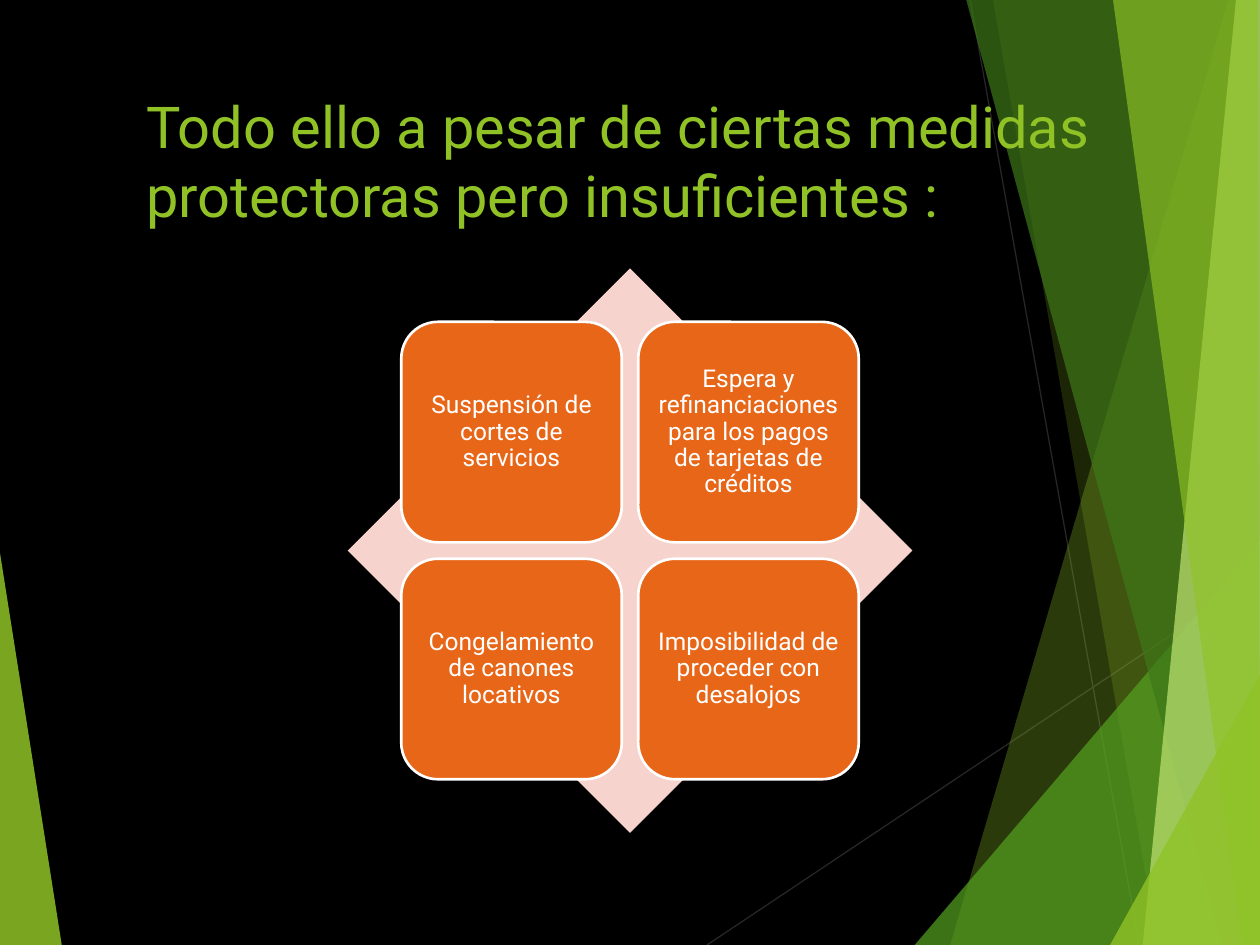
from lxml.etree import SubElement
from pptx import Presentation
from pptx.dml.color import RGBColor
from pptx.enum.shapes import MSO_CONNECTOR, MSO_SHAPE
from pptx.enum.text import MSO_ANCHOR, MSO_AUTO_SIZE, PP_ALIGN
from pptx.oxml.ns import qn
from pptx.util import Pt

BLACK = RGBColor(0x00, 0x00, 0x00)
WHITE = RGBColor(0xFF, 0xFF, 0xFF)
CHARCOAL = RGBColor(0x26, 0x26, 0x26)
LIME = RGBColor(0x90, 0xC2, 0x26)
LEAF = RGBColor(0x54, 0xA0, 0x21)
FOREST = RGBColor(0x3F, 0x78, 0x19)
PALE_LIME = RGBColor(0xC0, 0xE4, 0x74)
ORANGE = RGBColor(0xE7, 0x66, 0x18)
ROSE = RGBColor(0xF6, 0xD3, 0xCC)

WIDTH, HEIGHT = 720, 540

# Facets: colour, opacity in percent, corners in points
FACETS = [
    (LIME, 85, [(0, 316), (35.3, HEIGHT), (0, HEIGHT)]),
    (LIME, 30, [(702, 0), (543, HEIGHT), (WIDTH, HEIGHT), (WIDTH, 0)]),
    (LIME, 20, [(567.4, 0), (661.7, HEIGHT), (WIDTH, HEIGHT), (WIDTH, 0)]),
    (LEAF, 72, [(522.7, HEIGHT), (WIDTH, 309), (WIDTH, HEIGHT)]),
    (FOREST, 70, [(552.2, 0), (698.4, HEIGHT), (WIDTH, HEIGHT), (WIDTH, 0)]),
    (PALE_LIME, 70, [(706.3, 0), (653, HEIGHT), (WIDTH, HEIGHT), (WIDTH, 0)]),
    (LIME, 65, [(636, 0), (710, HEIGHT), (WIDTH, HEIGHT), (718.6, 0)]),
    (LIME, 80, [(634.3, HEIGHT), (WIDTH, 385.5), (WIDTH, HEIGHT)]),
]
RAYS = [((404, HEIGHT), (WIDTH, 329)), ((554.4, 0), (651, HEIGHT))]

# Matrix of measures, centred on the diamond
MEASURES = [
    "Suspensión de cortes de servicios",
    "Espera y refinanciaciones para los pagos de tarjetas de créditos",
    "Congelamiento de canones locativos",
    "Imposibilidad de proceder con desalojos",
]
CENTRE_X, CENTRE_Y = 360, 314.6
DIAMOND = 322.6
CARD, GAP = 126, 9.4


class SlideBuilder:
    font = "Roboto"
    title_size = 33
    card_size = 14

    def __init__(self, slide):
        self.slide = slide
        self.shapes = slide.shapes

    def background(self, colour):
        fill = self.slide.background.fill
        fill.solid()
        fill.fore_color.rgb = colour

    def add_text(self, frame, text, size, colour, align):
        paragraph = frame.paragraphs[0]
        paragraph.alignment = align
        run = paragraph.add_run()
        run.text = text
        run.font.name = self.font
        run.font.size = Pt(size)
        run.font.color.rgb = colour
        return paragraph

    def ray(self, start, end):
        ray = self.shapes.add_connector(
            MSO_CONNECTOR.STRAIGHT, *map(Pt, start + end))
        ray.line.color.rgb = CHARCOAL
        ray.line.width = Pt(0.75)
        SubElement(ray._element.spPr, qn("a:effectLst"))

    def paint(self, shape, colour):
        shape.shadow.inherit = False
        shape.fill.solid()
        shape.fill.fore_color.rgb = colour
        shape.line.fill.background()

    def facet(self, colour, opacity, corners):
        points = [(Pt(x), Pt(y)) for x, y in corners]
        builder = self.shapes.build_freeform(*points[0])
        builder.add_line_segments(points[1:], close=True)
        facet = builder.convert_to_shape()
        self.paint(facet, colour)
        tint = facet._element.spPr.find(qn("a:solidFill"))[0]
        SubElement(tint, qn("a:alpha"), val=str(opacity * 1000))

    def title(self, text):
        title = self.shapes.title
        title.left, title.top = Pt(76.3), Pt(48.2)
        title.width, title.height = Pt(602), Pt(86.4)
        frame = title.text_frame
        frame.word_wrap = True
        frame.auto_size = MSO_AUTO_SIZE.NONE
        frame.vertical_anchor = MSO_ANCHOR.BOTTOM
        self.add_text(frame, text, self.title_size, LIME, PP_ALIGN.LEFT)
        # Bring the title in front of the facets
        title._element.getparent().append(title._element)

    def square(self, kind, left, top, side, colour):
        square = self.shapes.add_shape(
            kind, Pt(left), Pt(top), Pt(side), Pt(side))
        self.paint(square, colour)
        return square

    def card(self, left, top, text):
        card = self.square(
            MSO_SHAPE.ROUNDED_RECTANGLE, left, top, CARD, ORANGE)
        card.line.color.rgb = WHITE
        card.line.width = Pt(1.5)
        frame = card.text_frame
        frame.word_wrap = True
        frame.vertical_anchor = MSO_ANCHOR.MIDDLE
        frame.margin_left = frame.margin_right = Pt(4.3)
        frame.margin_top = frame.margin_bottom = Pt(4.3)
        measure = self.add_text(
            frame, text, self.card_size, WHITE, PP_ALIGN.CENTER)
        measure.line_spacing = 0.9


def main():
    deck = Presentation()
    deck.slide_width, deck.slide_height = Pt(WIDTH), Pt(HEIGHT)
    builder = SlideBuilder(deck.slides.add_slide(deck.slide_layouts[5]))

    # Backdrop
    builder.background(BLACK)
    for start, end in RAYS:
        builder.ray(start, end)
    for colour, opacity, corners in FACETS:
        builder.facet(colour, opacity, corners)

    # Heading
    builder.title("Todo ello a pesar de ciertas medidas "
                  "protectoras pero insuficientes :")

    # Diamond with the four measures
    builder.square(MSO_SHAPE.DIAMOND, CENTRE_X - DIAMOND / 2,
                   CENTRE_Y - DIAMOND / 2, DIAMOND, ROSE)
    first_left = CENTRE_X - GAP / 2 - CARD
    first_top = CENTRE_Y - GAP / 2 - CARD
    for index, measure in enumerate(MEASURES):
        row, column = divmod(index, 2)
        builder.card(first_left + column * (CARD + GAP),
                     first_top + row * (CARD + GAP), measure)

    deck.save("out.pptx")


if __name__ == "__main__":
    main()
